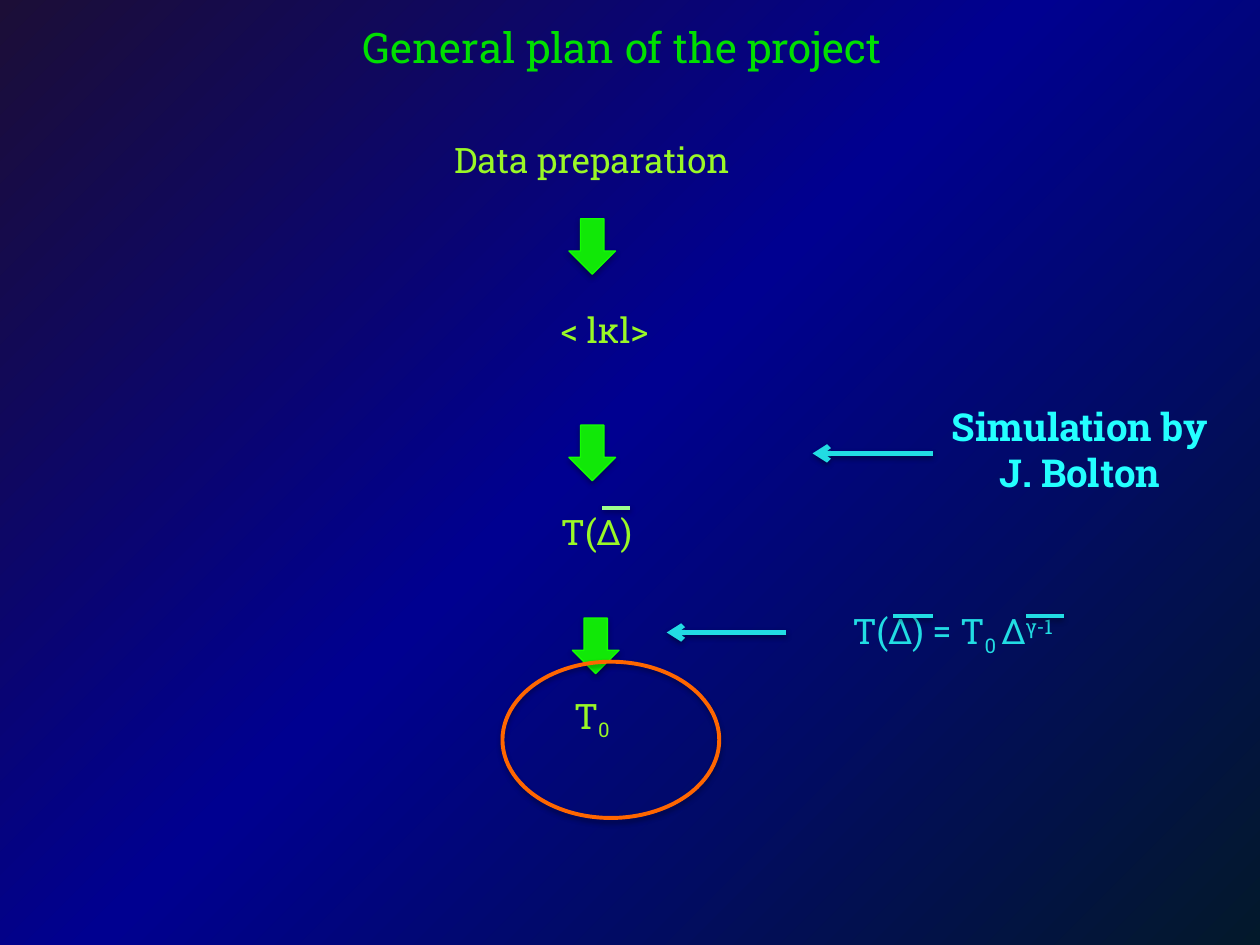
from dataclasses import dataclass

from lxml.etree import SubElement
from pptx import Presentation
from pptx.dml.color import RGBColor
from pptx.enum.shapes import MSO_CONNECTOR, MSO_SHAPE
from pptx.enum.text import MSO_ANCHOR, MSO_AUTO_SIZE, PP_ALIGN
from pptx.oxml.ns import qn
from pptx.util import Cm, Pt

FONT = "Roboto Slab"
COLORS = {
    "title": "00DF00",
    "stage": "9AF826",
    "source": "24FFFF",
    "relation": "22DCE3",
    "arrow": "13FF00",
    "mean": "9FFF8D",
    "result": "FF6600",
    "shadow": "000000",
}
GRADIENT = ((0, "1C0E37"), (47, "000090"), (100, "03192B"))


@dataclass(frozen=True)
class Box:
    left: float
    top: float
    width: float
    height: float

    def lengths(self) -> tuple:
        return Cm(self.left), Cm(self.top), Cm(self.width), Cm(self.height)


@dataclass(frozen=True)
class Piece:
    text: str
    baseline: int = 0


@dataclass(frozen=True)
class Label:
    pieces: tuple
    box: Box


@dataclass(frozen=True)
class Line:
    start: float
    end: float
    y: float
    color: str
    width: float = 2
    arrow: bool = False


STAGES = (
    Label((Piece("Data preparation"),), Box(7.49, 2.67, 8.89, 1.35)),
    Label((Piece("< lκl>"),), Box(9.04, 6.1, 6.3, 1.98)),
    Label((Piece("T(Δ) "),), Box(7.39, 10.16, 9.45, 2.01)),
    Label((Piece("T"), Piece("0 ", -25)), Box(10.13, 13.87, 3.71, 2.01)),
)
SIMULATION = Label((Piece("Simulation by J. Bolton"),), Box(18.8, 8, 5.94, 2.69))
EQUATION = Label(
    (Piece("T(Δ) = T"), Piece("0 ", -25), Piece("Δ"), Piece("γ-1", 30)),
    Box(16.94, 12.17, 7.34, 1.12),
)
STEP_ARROWS = ((11.47, 4.41), (11.47, 8.57), (11.54, 12.46))
LINES = (
    Line(18.8, 16.38, 9.14, "relation", 3, True),
    Line(15.85, 13.44, 12.75, "relation", 3, True),
    Line(12.14, 12.7, 10.24, "mean"),
    Line(18.8, 18.01, 12.42, "relation"),
    Line(21.44, 20.68, 12.42, "relation"),
)


def rgb(name: str) -> RGBColor:
    return RGBColor.from_string(COLORS[name])


def paint_background(slide) -> None:
    fill = slide.background.fill
    fill.gradient()
    fill.gradient_angle = 315
    stops = slide._element.find(".//" + qn("a:gsLst"))
    for stop in list(stops):
        stops.remove(stop)
    for position, color in GRADIENT:
        stop = SubElement(stops, qn("a:gs"), pos=str(position * 1000))
        SubElement(stop, qn("a:srgbClr"), val=color)


def write_text(shape, pieces, *, color="stage", size=20, bold=False,
               alignment=PP_ALIGN.CENTER) -> None:
    frame = shape.text_frame
    frame.word_wrap = True
    frame.auto_size = MSO_AUTO_SIZE.NONE
    frame.vertical_anchor = MSO_ANCHOR.TOP
    paragraph = frame.paragraphs[0]
    paragraph.alignment = alignment
    for piece in pieces:
        run = paragraph.add_run()
        run.text = piece.text
        run.font.name = FONT
        run.font.size = Pt(size)
        run.font.bold = bold
        run.font.color.rgb = rgb(color)
        if piece.baseline:
            run.font._element.set("baseline", str(piece.baseline * 1000))


def add_label(slide, label: Label, **text_format) -> None:
    shape = slide.shapes.add_textbox(*label.box.lengths())
    write_text(shape, label.pieces, **text_format)


def add_shadow(shape, opacity: int, distance: float) -> None:
    properties = shape._element.spPr
    effects = properties.find(qn("a:effectLst"))
    if effects is None:
        effects = SubElement(properties, qn("a:effectLst"))
    shadow = SubElement(effects, qn("a:outerShdw"), blurRad=str(Pt(3.1)),
                        dist=str(Pt(distance)), dir="5400000", rotWithShape="0")
    color = SubElement(shadow, qn("a:srgbClr"), val=COLORS["shadow"])
    SubElement(color, qn("a:alpha"), val=str(opacity * 1000))


def add_outlined(slide, kind, box: Box, color: str, width: float):
    shape = slide.shapes.add_shape(kind, *box.lengths())
    shape.shadow.inherit = False
    shape.fill.background()
    shape.line.color.rgb = rgb(color)
    shape.line.width = Pt(width)
    add_shadow(shape, 35, 1.8)
    return shape


def add_step_arrow(slide, left: float, top: float) -> None:
    box = Box(left, top, 0.94, 1.12)
    arrow = add_outlined(slide, MSO_SHAPE.DOWN_ARROW, box, "arrow", 0.75)
    arrow.fill.solid()
    arrow.fill.fore_color.rgb = rgb("arrow")
    color = arrow._element.spPr.find(qn("a:solidFill")).find(qn("a:srgbClr"))
    SubElement(color, qn("a:alpha"), val="91000")


def add_line(slide, line: Line) -> None:
    connector = slide.shapes.add_connector(
        MSO_CONNECTOR.STRAIGHT, Cm(line.start), Cm(line.y), Cm(line.end), Cm(line.y))
    connector.line.color.rgb = rgb(line.color)
    connector.line.width = Pt(line.width)
    if line.arrow:
        outline = connector._element.spPr.find(qn("a:ln"))
        SubElement(outline, qn("a:tailEnd"), type="arrow")
    add_shadow(connector, 38, 1.6)


def main() -> None:
    presentation = Presentation()
    presentation.slide_width, presentation.slide_height = Cm(25.4), Cm(19.05)
    slide = presentation.slides.add_slide(presentation.slide_layouts[5])
    paint_background(slide)

    title = slide.shapes.title
    title.left, title.top, title.width, title.height = Box(
        0.56, 0.3, 24.18, 1.88).lengths()
    write_text(title, (Piece("General plan of the project "),), color="title", size=24)

    for stage in STAGES:
        add_label(slide, stage)
    add_label(slide, SIMULATION, color="source", size=22, bold=True)
    for left, top in STEP_ARROWS:
        add_step_arrow(slide, left, top)
    add_outlined(slide, MSO_SHAPE.OVAL, Box(10.13, 13.34, 4.37, 3.15), "result", 2.25)
    add_label(slide, EQUATION, color="relation", alignment=PP_ALIGN.LEFT)
    for line in LINES:
        add_line(slide, line)

    presentation.save("out.pptx")


if __name__ == "__main__":
    main()
